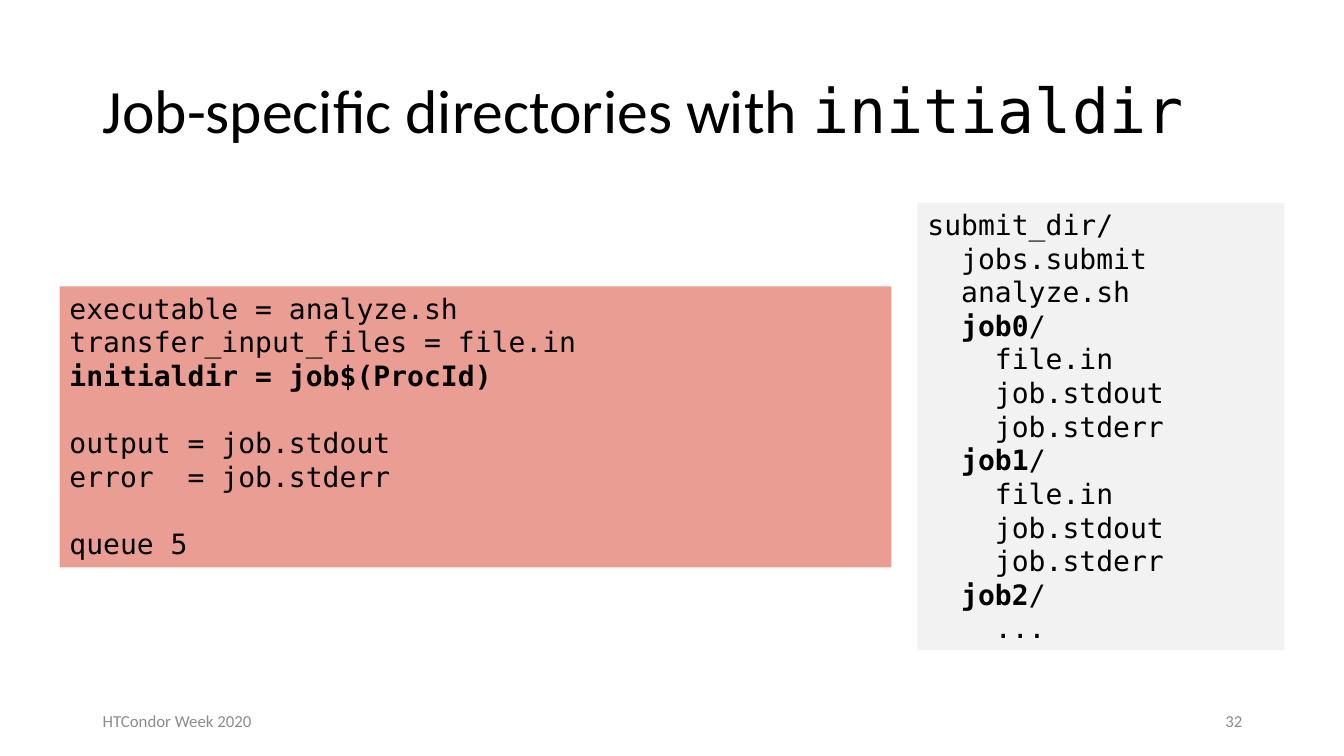
"""Build the slide on job-specific directories with initialdir."""
from dataclasses import dataclass

from pptx import Presentation
from pptx.dml.color import RGBColor
from pptx.enum import shapes, text
from pptx.util import Inches, Pt


@dataclass(frozen=True)
class Theme:
    ink: str = "000000"
    muted: str = "8C8C8C"
    submit_fill: str = "E99D93"
    tree_fill: str = "F2F2F2"
    sans: str = "Calibri"
    mono: str = "DejaVu Sans Mono"
    title_size: int = 44
    code_size: int = 20
    footer_size: int = 12
    code_line: int = 24


theme = Theme()


def add_run(p, words, font=theme.sans, size=theme.code_size, color=theme.ink, bold=False):
    r = p.add_run()
    r.text = words
    r.font.name = font
    r.font.size = Pt(size)
    r.font.bold = bold
    r.font.color.rgb = RGBColor.from_string(color)


def add_label(s, left, top, width, height, align=text.PP_ALIGN.LEFT):
    tf = s.shapes.add_textbox(Inches(left), Inches(top), Inches(width), Inches(height)).text_frame
    tf.word_wrap = True
    tf.vertical_anchor = text.MSO_ANCHOR.MIDDLE
    p = tf.paragraphs[0]
    p.alignment = align
    return p


prs = Presentation()
prs.slide_width, prs.slide_height = Inches(13.33), Inches(7.5)
s = prs.slides.add_slide(prs.slide_layouts[6])

p = add_label(s, 0.92, 0.4, 11.5, 1.45)
p.line_spacing = 0.9
add_run(p, "Job-specific directories with ", size=theme.title_size)
add_run(p, "initialdir", font=theme.mono, size=theme.title_size)

submit_code = """executable = analyze.sh
transfer_input_files = file.in
*initialdir = job$(ProcId)*

output = job.stdout
error  = job.stderr

queue 5"""

job_files = ["    file.in", "    job.stdout", "    job.stderr"]
tree = ["submit_dir/", "  jobs.submit", "  analyze.sh"]
for job in range(3):
    tree += [f"  *job{job}*/"] + (job_files if job < 2 else ["    ..."])

panels = [
    (0.59, 2.84, 8.25, 2.79, theme.submit_fill, submit_code.split("\n")),
    (9.1, 2.01, 3.64, 4.44, theme.tree_fill, tree),
]
for left, top, width, height, fill, lines in panels:
    sp = s.shapes.add_shape(
        shapes.MSO_SHAPE.RECTANGLE, Inches(left), Inches(top), Inches(width), Inches(height)
    )
    sp.shadow.inherit = False
    sp.fill.solid()
    sp.fill.fore_color.rgb = RGBColor.from_string(fill)
    sp.line.fill.background()
    tf = sp.text_frame
    tf.word_wrap = True
    tf.vertical_anchor = text.MSO_ANCHOR.TOP
    for i, line in enumerate(lines):
        if not line:
            continue
        p = tf.add_paragraph() if i else tf.paragraphs[0]
        p.alignment = text.PP_ALIGN.LEFT
        if i and not lines[i - 1]:
            p.space_before = Pt(theme.code_line)
        for k, part in enumerate(line.split("*")):
            if part:
                add_run(p, part, font=theme.mono, bold=k % 2 == 1)

footers = [
    (0.92, "HTCondor Week 2020", text.PP_ALIGN.LEFT),
    (9.42, "32", text.PP_ALIGN.RIGHT),
]
for left, words, align in footers:
    p = add_label(s, left, 6.95, 3, 0.4, align)
    add_run(p, words, size=theme.footer_size, color=theme.muted)

prs.save("out.pptx")
